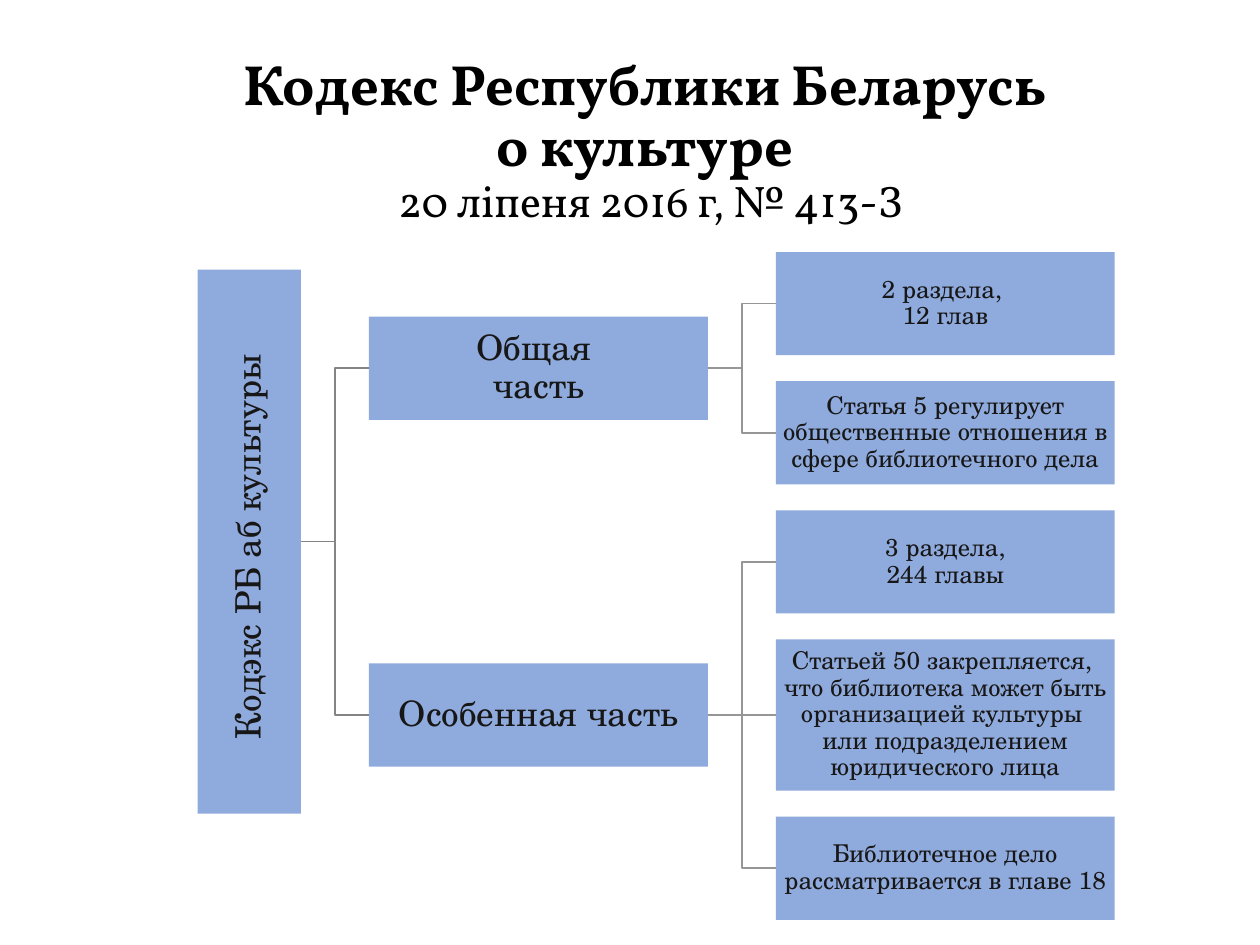
from lxml import etree
from pptx import Presentation
from pptx.enum import shapes, text
from pptx.oxml import ns
from pptx.util import Pt
from pptx.dml.color import RGBColor

COLORS = {"title": "000000", "box": "8FAADC", "label": "181717",
          "trunk": "848484", "branch": "969696"}
TITLE_FONT, LABEL_FONT = "Vollkorn", "TeX Gyre Schola"

# "\v" marks a line break inside a paragraph
TITLE = [("Кодекс Республики Беларусь \vо культуре \v", 32.4, True),
         ("20 ліпеня 2016 г, № 413-З", 25.2, False)]
ROOT = "Кодэкс РБ аб культуры "
BOX_H, TALL_H = 59, 86.4
PARTS = [
    ("Общая \vчасть", [
        ("2 раздела, \v12 глав", BOX_H),
        ("Статья 5 регулирует общественные отношения в сфере библиотечного дела", BOX_H),
    ]),
    ("Особенная часть", [
        ("3 раздела,\v244 главы", BOX_H),
        ("Статьей 50 закрепляется, \vчто библиотека может быть организацией культуры "
         "\vили подразделением юридического лица", TALL_H),
        ("Библиотечное дело рассматривается в главе 18", BOX_H),
    ]),
]

ROOT_X, ROOT_LENGTH = 113, 311
BOX_W, COLUMN_GAP = 193.7, 38.8
LEAF_TOP, LEAF_GAP = 144, 14.8
PART_X = ROOT_X + BOX_H + COLUMN_GAP
LEAF_X = PART_X + BOX_W + COLUMN_GAP
PART_SIZE, LEAF_SIZE = 20, 14


def color(name):
    return RGBColor.from_string(COLORS[name])


def write(shape, spans, font, ink, inset=None):
    """Put spans of (words, size, bold) into one centred paragraph."""
    frame = shape.text_frame
    settings = {"word_wrap": True, "vertical_anchor": text.MSO_ANCHOR.MIDDLE}
    if inset is not None:
        for side in ("left", "right", "top", "bottom"):
            settings["margin_" + side] = Pt(inset)
    for name, value in settings.items():
        setattr(frame, name, value)
    para = frame.paragraphs[0]
    para.alignment = text.PP_ALIGN.CENTER
    para.line_spacing = 0.9
    for words, size, bold in spans:
        for i, line in enumerate(words.split("\v")):
            if i:
                para.add_line_break()
                mark = para._p.findall(ns.qn("a:br"))[-1]
                etree.SubElement(mark, ns.qn("a:rPr"), sz=str(round(size * 100)))
            if line:
                span = para.add_run()
                span.text = line
                look = {"name": font, "size": Pt(size), "bold": bold}
                for name, value in look.items():
                    setattr(span.font, name, value)
                span.font.color.rgb = color(ink)


def add_box(page, words, size, left, middle, width, height):
    box = page.shapes.add_shape(shapes.MSO_SHAPE.RECTANGLE, Pt(left),
                                Pt(middle - height / 2), Pt(width), Pt(height))
    box.shadow.inherit = False
    box.fill.solid()
    box.fill.fore_color.rgb = color("box")
    box.line.fill.background()
    write(box, [(words, size, False)], LABEL_FONT, "label", inset=0.7)
    return box


def add_link(page, left, start, end, ink):
    """Cross a column gap from height start to height end."""
    straight = abs(start - end) < 1
    kind = shapes.MSO_CONNECTOR.STRAIGHT if straight else shapes.MSO_CONNECTOR.ELBOW
    link = page.shapes.add_connector(kind, Pt(left), Pt(start), Pt(left + COLUMN_GAP),
                                     Pt(start if straight else end))
    link.line.color.rgb = color(ink)
    link.line.width = Pt(1)
    etree.SubElement(link._element.spPr, ns.qn("a:effectLst"))


def main():
    deck = Presentation()
    deck.slide_width, deck.slide_height = Pt(720), Pt(540)
    page = deck.slides.add_slide(deck.slide_layouts[6])
    title = page.shapes.add_textbox(Pt(49.7), Pt(28.8), Pt(644.4), Pt(104.4))
    write(title, TITLE, TITLE_FONT, "title")

    top, part_middles = LEAF_TOP, []
    for part, leaves in PARTS:
        middles = []
        for words, height in leaves:
            middles.append(top + height / 2)
            add_box(page, words, LEAF_SIZE, LEAF_X, middles[-1], BOX_W, height)
            top += height + LEAF_GAP
        middle = (middles[0] + middles[-1]) / 2
        part_middles.append(middle)
        add_box(page, part, PART_SIZE, PART_X, middle, BOX_W, BOX_H)
        for leaf_middle in middles:
            add_link(page, PART_X + BOX_W, middle, leaf_middle, "branch")

    root_middle = sum(part_middles) / len(part_middles)
    root_left = ROOT_X + (BOX_H - ROOT_LENGTH) / 2
    root = add_box(page, ROOT, PART_SIZE, root_left, root_middle, ROOT_LENGTH, BOX_H)
    root.rotation = 270
    for middle in part_middles:
        add_link(page, ROOT_X + BOX_H, root_middle, middle, "trunk")

    deck.save("out.pptx")


if __name__ == "__main__":
    main()
